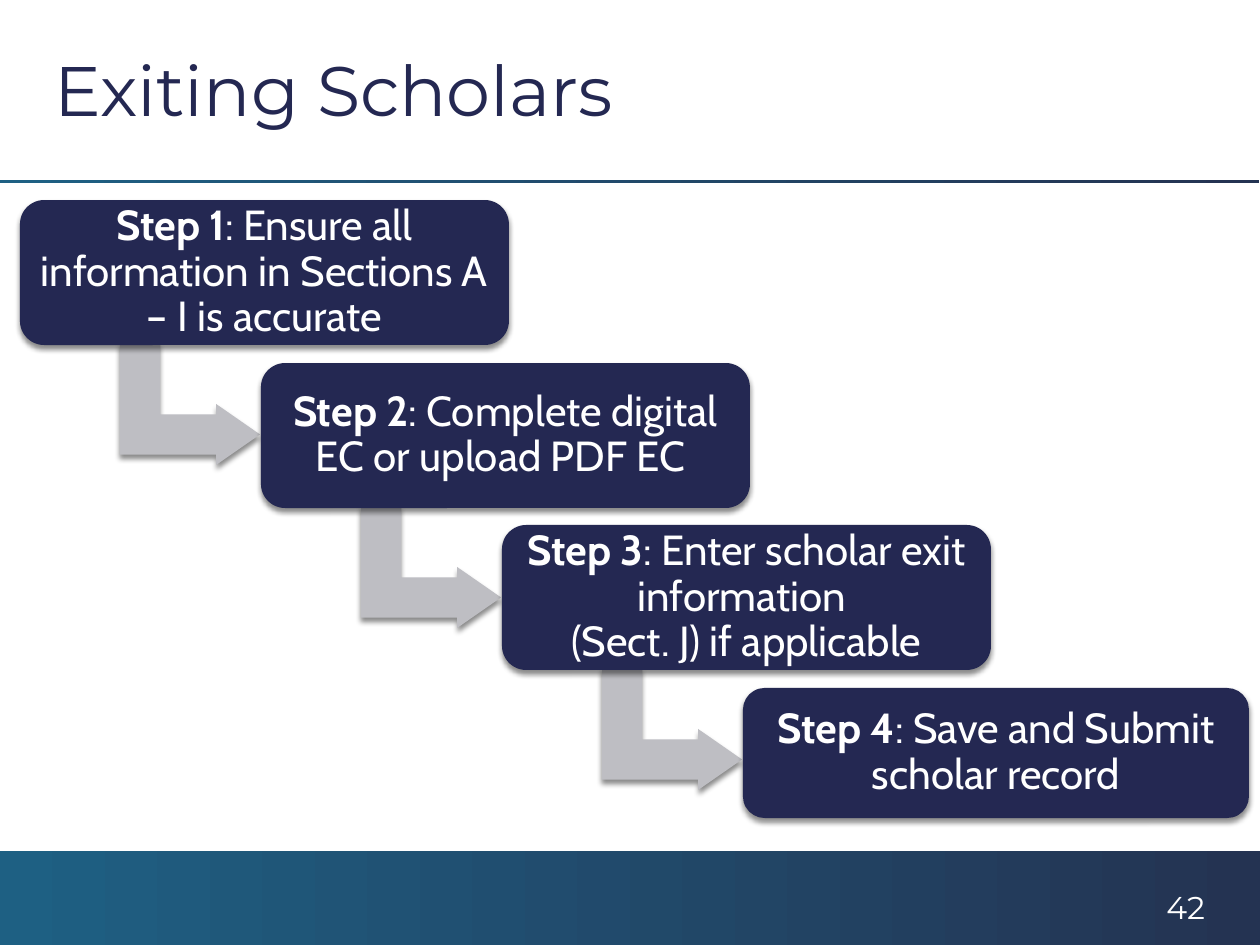
from lxml import etree
from pptx import Presentation
from pptx import util as u
from pptx.dml.color import RGBColor
from pptx.enum import shapes as sh, text as tx
from pptx.oxml.ns import qn

SCALE = 914400 / 126
NAVY, GREY, WHITE = "242852", "BEBEC3", "FFFFFF"
BAND = ("1E6083", "243352")

# Bold label, then the text with its line breaks
STEPS = [
    ("Step 1", ": Ensure all information in Sections A – I is accurate"),
    ("Step 2", ": Complete digital EC or upload PDF EC "),
    ("Step 3", ": Enter scholar exit information \n(Sect. J) if applicable"),
    ("Step 4", ": Save and Submit scholar record"),
]


def px(n):
    return u.Emu(round(n * SCALE))


def rgb(code):
    return RGBColor.from_string(code)


def style(font, name, size, color):
    font.name, font.size = name, u.Pt(size)
    font.color.rgb = rgb(color)


def add_shape(slide, kind, box):
    shape = slide.shapes.add_shape(kind, *map(px, box))
    shape.line.fill.background()
    shape.shadow.inherit = False
    return shape


def add_band(slide, box):
    fill = add_shape(slide, sh.MSO_SHAPE.RECTANGLE, box).fill
    fill.gradient()
    fill.gradient_angle = 0
    for stop, color in zip(fill.gradient_stops, BAND):
        stop.color.rgb = rgb(color)


def add_raised(slide, kind, box, color):
    shape = add_shape(slide, kind, box)
    shape.fill.solid()
    shape.fill.fore_color.rgb = rgb(color)
    effects = shape._element.spPr.find(qn("a:effectLst"))
    shadow = etree.SubElement(
        effects, qn("a:outerShdw"), blurRad="38100", dist="30480",
        dir="5400000", algn="ctr", rotWithShape="0")
    black = etree.SubElement(shadow, qn("a:srgbClr"), val="000000")
    etree.SubElement(black, qn("a:alpha"), val="45000")
    return shape


def add_arrow(slide, x, y):
    kind = sh.MSO_SHAPE.BENT_UP_ARROW
    arrow = add_raised(slide, kind, (x, y, 122, 140), GREY)
    arrow.rotation = 90
    for i, value in enumerate((0.33, 0.25, 0.36)):
        arrow.adjustments[i] = value


def add_step(slide, box, label, body):
    kind = sh.MSO_SHAPE.ROUNDED_RECTANGLE
    frame = add_raised(slide, kind, box, NAVY).text_frame
    frame.word_wrap = True
    frame.vertical_anchor = tx.MSO_ANCHOR.MIDDLE
    frame.margin_left = frame.margin_right = px(12)
    frame.margin_top = frame.margin_bottom = px(12)
    para = frame.paragraphs[0]
    para.alignment = tx.PP_ALIGN.CENTER
    para.line_spacing, para.space_after = 0.9, u.Pt(6)
    style(para.font, "Cabin", 24, WHITE)
    run = para.add_run()
    run.text, run.font.bold = label, True
    for i, line in enumerate(body.split("\n")):
        if i:
            para.add_line_break()
        para.add_run().text = line


def set_title(slide, words):
    title = slide.shapes.title
    title.left, title.top, title.width, title.height = map(
        px, (42, 21, 1166, 136))
    frame = title.text_frame
    frame.text = words
    frame.auto_size = tx.MSO_AUTO_SIZE.NONE
    frame.vertical_anchor = tx.MSO_ANCHOR.MIDDLE
    para = frame.paragraphs[0]
    para.alignment = tx.PP_ALIGN.LEFT
    style(para.font, "Montserrat", 40, NAVY)


def add_number(slide, words):
    box = slide.shapes.add_textbox(*map(px, (1154, 882, 73, 34)))
    box.text_frame.word_wrap = True
    para = box.text_frame.paragraphs[0]
    para.text = words
    style(para.font, "Montserrat", 18, WHITE)


def main():
    deck = Presentation()
    deck.slide_width, deck.slide_height = px(1260), px(945)
    slide = deck.slides.add_slide(deck.slide_layouts[5])

    # Footer band, rule and title
    add_band(slide, (0, 851, 1260, 94))
    add_band(slide, (-1, 180, 1260, 3))
    set_title(slide, "Exiting Scholars")

    # Staircase: each step but the last has an arrow to the next
    last = len(STEPS) - 1
    for i, (label, body) in enumerate(STEPS):
        right, down = 241 * i, (325 * i + 1) // 2
        if i < last:
            add_arrow(slide, 129 + right, 334 + down)
        size = (489, 145) if i < last else (506, 130)
        add_step(slide, (20 + right, 200 + down, *size), label, body)

    # Page number
    add_number(slide, "42")
    deck.save("out.pptx")


if __name__ == "__main__":
    main()
